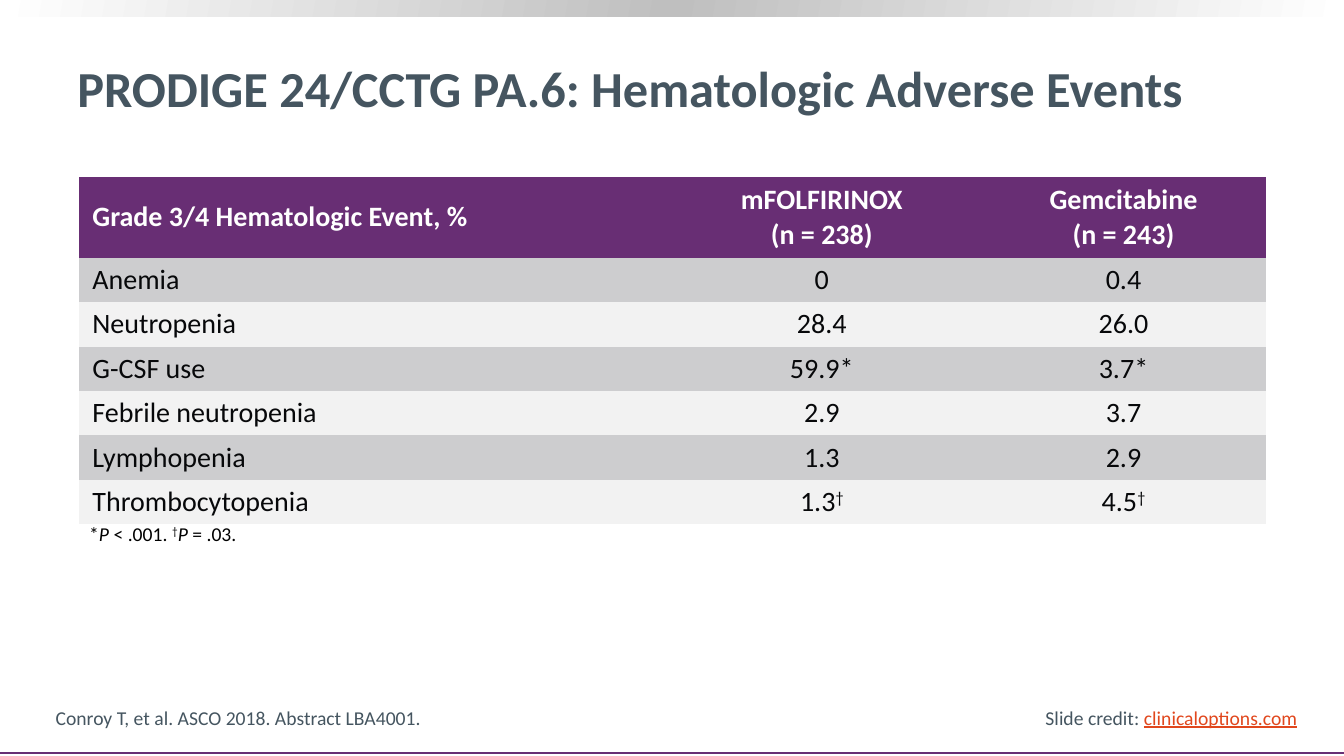
from lxml import etree
from pptx import Presentation
from pptx.dml.color import RGBColor
from pptx.enum.shapes import MSO_CONNECTOR, MSO_SHAPE
from pptx.enum.text import MSO_ANCHOR, MSO_AUTO_SIZE, PP_ALIGN
from pptx.oxml import parse_xml
from pptx.oxml.ns import nsdecls, qn
from pptx.util import Inches, Pt

PURPLE = RGBColor(0x68, 0x2E, 0x74)
SLATE = RGBColor(0x45, 0x55, 0x60)
ORANGE = RGBColor(0xE1, 0x47, 0x1D)
INK = RGBColor(0x07, 0x08, 0x0A)
BLACK = RGBColor(0, 0, 0)
WHITE = RGBColor(0xFF, 0xFF, 0xFF)
SILVER = RGBColor(0xBF, 0xBF, 0xBF)
BAND_DARK = RGBColor(0xCD, 0xCD, 0xCF)
BAND_LIGHT = RGBColor(0xF2, 0xF2, 0xF2)

PLAIN_TABLE_STYLE = "{2D5ABB26-0587-4C30-8999-92F81FD0307C}"
EVENTS = [
    ("Grade 3/4 Hematologic Event, %", "mFOLFIRINOX\n(n = 238)", "Gemcitabine\n(n = 243)"),
    ("Anemia", "0", "0.4"),
    ("Neutropenia", "28.4", "26.0"),
    ("G-CSF use", "59.9*", "3.7*"),
    ("Febrile neutropenia", "2.9", "3.7"),
    ("Lymphopenia", "1.3", "2.9"),
    ("Thrombocytopenia", "1.3†", "4.5†"),
]


class SlideBuilder:
    """Places elements by percent of the slide's width and height."""

    font_name = "Calibri"

    def __init__(self, deck):
        self.width, self.height = deck.slide_width, deck.slide_height
        self.slide = deck.slides.add_slide(deck.slide_layouts[5])

    def x(self, percent):
        return round(self.width * percent / 100)

    def y(self, percent):
        return round(self.height * percent / 100)

    def area(self, left, top, width, height):
        return self.x(left), self.y(top), self.x(width), self.y(height)

    def add_runs(self, paragraph, pieces, size, color, bold=False):
        """Add (text, look) pieces; look is "", "italic", "super" or "link"."""
        for text, look in pieces:
            run = paragraph.add_run()
            run.text = text
            font = run.font
            font.name, font.size, font.bold = self.font_name, Pt(size), bold
            font.color.rgb = ORANGE if look == "link" else color
            if look == "italic":
                font.italic = True
            elif look == "link":
                font.underline = True
            elif look == "super":
                run._r.get_or_add_rPr().set("baseline", "30000")

    def title(self, text, *area):
        heading = self.slide.shapes.title
        heading.left, heading.top, heading.width, heading.height = self.area(*area)
        frame = heading.text_frame
        frame.auto_size = MSO_AUTO_SIZE.NONE
        frame.vertical_anchor = MSO_ANCHOR.MIDDLE
        frame.paragraphs[0].alignment = PP_ALIGN.LEFT
        self.add_runs(frame.paragraphs[0], [(text, "")], 36, SLATE, bold=True)

    def note(self, pieces, *area, color=SLATE, wrap=False):
        frame = self.slide.shapes.add_textbox(*self.area(*area)).text_frame
        frame.word_wrap = wrap
        self.add_runs(frame.paragraphs[0], pieces, 14, color)

    def gradient_band(self, colors, angle, *area):
        band = self.slide.shapes.add_shape(MSO_SHAPE.RECTANGLE, *self.area(*area))
        band.shadow.inherit = False
        band.line.fill.background()
        step = 100000 // (len(colors) - 1)
        stops = "".join(
            f'<a:gs pos="{i * step}"><a:srgbClr val="{color}"/></a:gs>'
            for i, color in enumerate(colors)
        )
        gradient = parse_xml(
            f'<a:gradFill {nsdecls("a")}><a:gsLst>{stops}</a:gsLst>'
            f'<a:lin ang="{angle * 60000}" scaled="0"/></a:gradFill>'
        )
        band._element.spPr.find(qn("a:prstGeom")).addnext(gradient)

    def rule(self, top, color, weight):
        line = self.slide.shapes.add_connector(
            MSO_CONNECTOR.STRAIGHT, 0, self.y(top), self.width, self.y(top)
        )
        line.line.color.rgb, line.line.width = color, Pt(weight)
        etree.SubElement(line._element.spPr, qn("a:effectLst"))

    def table(self, rows, left, top, columns, header_height, row_height):
        heights = [header_height] + [row_height] * (len(rows) - 1)
        area = self.area(left, top, sum(columns), sum(heights))
        table = self.slide.shapes.add_table(len(rows), len(columns), *area).table
        table.horz_banding = False
        table._tbl.tblPr.find(qn("a:tableStyleId")).text = PLAIN_TABLE_STYLE
        for column, width in zip(table.columns, columns):
            column.width = self.x(width)
        for r, (values, height) in enumerate(zip(rows, heights)):
            table.rows[r].height = self.y(height)
            fill = PURPLE if r == 0 else BAND_DARK if r % 2 else BAND_LIGHT
            for c, value in enumerate(values):
                self.cell(table.cell(r, c), value, fill, header=r == 0, centered=c > 0)

    def cell(self, cell, value, fill, header, centered):
        cell.fill.solid()
        cell.fill.fore_color.rgb = fill
        cell.margin_left = cell.margin_right = Inches(0.13)
        cell.vertical_anchor = MSO_ANCHOR.MIDDLE
        frame = cell.text_frame
        for i, line in enumerate(value.split("\n")):
            paragraph = frame.add_paragraph() if i else frame.paragraphs[0]
            paragraph.alignment = PP_ALIGN.CENTER if centered else PP_ALIGN.LEFT
            number, dagger, _ = line.partition("†")
            pieces = [(number, "")] + ([(dagger, "super")] if dagger else [])
            self.add_runs(paragraph, pieces, 20, WHITE if header else INK, bold=header)


def main():
    deck = Presentation()
    deck.slide_width, deck.slide_height = Inches(13.33), Inches(7.5)
    page = SlideBuilder(deck)
    page.gradient_band([WHITE, SILVER, WHITE], 190, 0, 0, 100, 2.13)
    page.rule(99.6, PURPLE, 2)
    page.title("PRODIGE 24/CCTG PA.6: Hematologic Adverse Events", 5, 3.5, 89.2, 16.1)
    page.table(EVENTS, 5.9, 23.4, [43.4, 23.7, 21.2], 10.7, 5.8)
    page.note(
        [("Slide credit: ", ""), ("clinicaloptions.com", "link")], 77.05, 92.7, 20.4, 4.5
    )
    page.note(
        [("Conroy T, et al. ASCO 2018. Abstract LBA4001.", "")],
        3.4, 92.7, 65.7, 4.5, wrap=True,
    )
    page.note(
        [("*", ""), ("P ", "italic"), ("< .001. ", ""),
         ("†", "super"), ("P ", "italic"), ("= .03.", "")],
        5.9, 68.4, 12.6, 4.5, color=BLACK,
    )
    deck.save("out.pptx")


if __name__ == "__main__":
    main()
